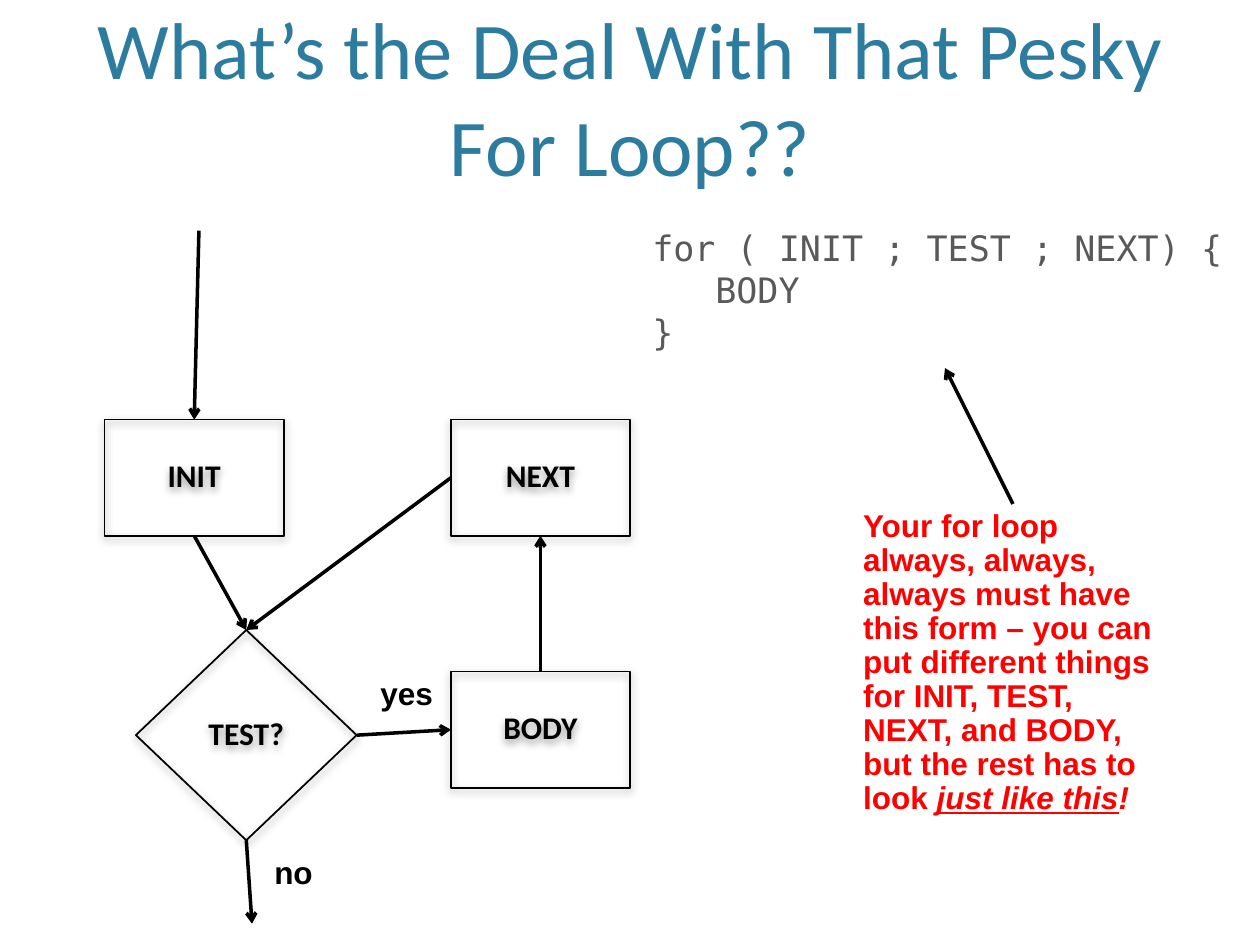
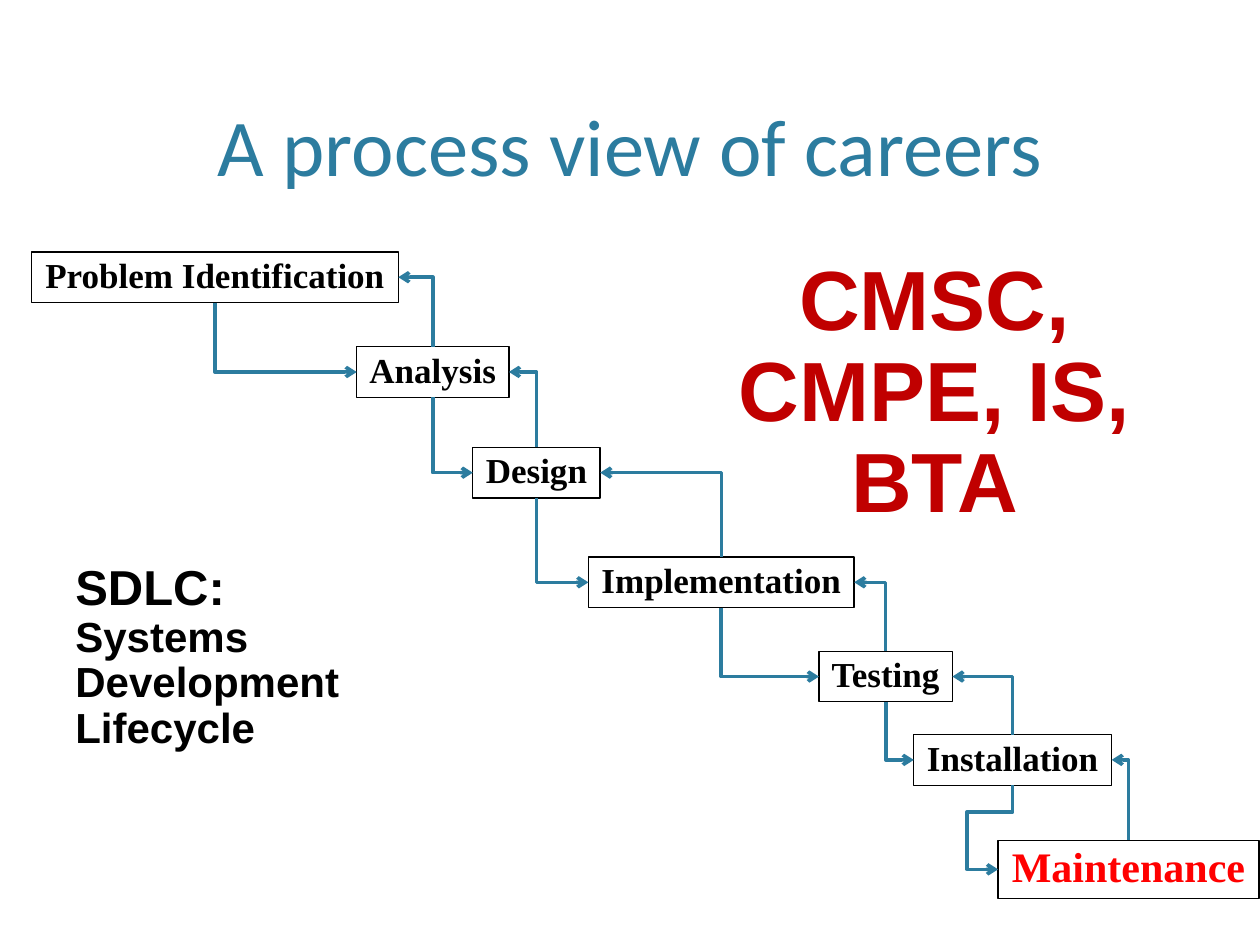
from itertools import pairwise

from pptx import Presentation
from pptx.dml.color import RGBColor
from pptx.enum.shapes import MSO_CONNECTOR as Link, MSO_SHAPE as Preset
from pptx.enum.text import MSO_ANCHOR as Anchor, MSO_AUTO_SIZE as Fit, PP_ALIGN as Align
from pptx.oxml import parse_xml
from pptx.oxml.ns import nsdecls, qn
from pptx.util import Cm, Pt

COLORS = {
    "accent": "2C7C9F",
    "code": "595959",
    "ink": "000000",
    "alert": "FF0000",
    "careers": "C00000",
}
TITLE_ONLY = 5
TOP, LEFT, BOTTOM, RIGHT = range(4)  # connection sites of rectangles and diamonds


def color(name):
    return RGBColor.from_string(COLORS[name])


def cm_all(*lengths):
    return [Cm(length) for length in lengths]


def add_span(para, text, font="Arial", size=18, ink="ink", bold=True,
             italic=False, underline=False):
    span = para.add_run()
    span.text = text
    span.font.name = font
    span.font.size = Pt(size)
    span.font.bold = bold
    span.font.italic = italic
    span.font.underline = underline
    span.font.color.rgb = color(ink)


def add_title(page, text):
    title = page.shapes.title
    title.left, title.top, title.width, title.height = cm_all(1.52, 0.3, 22.35, 3.71)
    frame = title.text_frame
    frame.auto_size = Fit.NONE
    frame.word_wrap = True
    frame.vertical_anchor = Anchor.BOTTOM
    para = frame.paragraphs[0]
    para.alignment = Align.CENTER
    add_span(para, text, font="Calibri", size=46, ink="accent", bold=False)


def add_text(page, at, *lines, align=Align.LEFT, spacing=0.9, wrap=True):
    """Add a text box; each line is a list of (text, format) spans."""
    box = page.shapes.add_textbox(*cm_all(*at))
    frame = box.text_frame
    frame.word_wrap = wrap
    frame.auto_size = Fit.SHAPE_TO_FIT_TEXT
    for index, spans in enumerate(lines):
        para = frame.add_paragraph() if index else frame.paragraphs[0]
        para.alignment = align
        para.line_spacing = spacing
        for text, style in spans:
            add_span(para, text, **style)


def add_outline(page, preset, at, text, line_width, **style):
    """Add an unfilled, black-edged shape with centred text."""
    shape = page.shapes.add_shape(preset, *cm_all(*at))
    shape.shadow.inherit = False
    shape.fill.background()
    shape.line.color.rgb = color("ink")
    shape.line.width = Pt(line_width)
    para = shape.text_frame.paragraphs[0]
    para.alignment = Align.CENTER
    para.line_spacing = 0.9
    add_span(para, text, **style)
    return shape


def add_flow_node(page, preset, at, text):
    node = add_outline(page, preset, at, text, 1, font="Calibri")
    node.text_frame.vertical_anchor = Anchor.MIDDLE
    effects = node.element.spPr.find(qn("a:effectLst"))
    effects.append(parse_xml(
        f'<a:outerShdw {nsdecls("a")} blurRad="{Pt(5)}" dist="{Pt(2)}" dir="5400000"'
        ' rotWithShape="0"><a:srgbClr val="000000"><a:alpha val="40000"/></a:srgbClr>'
        '</a:outerShdw>'))
    return node


def add_step(page, left, top, width, text, height=1.02, size=20, ink="ink"):
    step = add_outline(page, Preset.RECTANGLE, (left, top, width, height), text, 0.75,
                       font="Times New Roman", size=size, ink=ink)
    step.text_frame.word_wrap = False
    step.text_frame.auto_size = Fit.SHAPE_TO_FIT_TEXT
    step.text_frame.vertical_anchor = Anchor.TOP
    return step


def add_arrow(page, start, end, kind=Link.STRAIGHT, ink="ink"):
    """Join two ends, each a (shape, site) pair or an (x, y) point in cm."""
    arrow = page.shapes.add_connector(kind, 0, 0, 0, 0)
    if isinstance(start[1], int) and not isinstance(start[0], float):
        arrow.begin_connect(*start)
    else:
        arrow.begin_x, arrow.begin_y = cm_all(*start)
    if isinstance(end[1], int) and not isinstance(end[0], float):
        arrow.end_connect(*end)
    else:
        arrow.end_x, arrow.end_y = cm_all(*end)
    arrow.line.color.rgb = color(ink)
    arrow.line.width = Pt(2)
    properties = arrow.element.spPr
    properties.find(qn("a:ln")).append(
        parse_xml(f'<a:tailEnd {nsdecls("a")} type="arrow"/>'))
    properties.append(parse_xml(f'<a:effectLst {nsdecls("a")}/>'))
    return arrow


def add_elbow(page, start, end, rotation, flip_h=False, flip_v=False, detour=None):
    """Add an arrow that leaves vertically and arrives horizontally.

    A detour (down, left) in cm makes the arrow pass round the target's left side.
    """
    arrow = add_arrow(page, start, end, Link.ELBOW, "accent")
    across = abs(arrow.end_x - arrow.begin_x)
    down = abs(arrow.end_y - arrow.begin_y)
    center_x = (arrow.begin_x + arrow.end_x) // 2
    center_y = (arrow.begin_y + arrow.end_y) // 2
    arrow.left, arrow.top = center_x - down // 2, center_y - across // 2
    arrow.width, arrow.height = down, across
    frame = arrow.element.spPr.xfrm
    frame.rot, frame.flipH, frame.flipV = rotation, flip_h, flip_v

    geometry = arrow.element.spPr.find(qn("a:prstGeom"))
    geometry.set("prst", "bentConnector4" if detour else "bentConnector2")
    if detour:
        shares = Cm(detour[0]) / down, Cm(detour[1]) / across
        guides = "".join(f'<a:gd name="adj{number}" fmla="val {round(share * 100000)}"/>'
                         for number, share in enumerate(shares, 1))
        geometry.replace(geometry.find(qn("a:avLst")),
                         parse_xml(f'<a:avLst {nsdecls("a")}>{guides}</a:avLst>'))


def link_steps(page, upper, lower):
    """Draw the way forward to the lower step and the way back to the upper one."""
    start, end = (upper, BOTTOM), (lower, LEFT)
    if upper.left + upper.width // 2 < lower.left:
        add_elbow(page, start, end, 270, flip_h=True)
    else:
        add_elbow(page, start, end, 90, detour=(0.54, 0.92))
    add_elbow(page, (lower, TOP), (upper, RIGHT), 270, flip_v=True)


def build_for_loop(page):
    add_title(page, "What’s the Deal With That Pesky For Loop??")
    code = "for ( INIT ; TEST ; NEXT) {", "\tBODY", "}"
    code_style = dict(font="DejaVu Sans Mono", size=20, ink="code", bold=False)
    add_text(page, (12.9, 4.45, 12.5, 3.38),
             *([(line, code_style)] for line in code), spacing=1.0)
    note = dict(ink="alert")
    add_text(page, (17.15, 10.16, 6.55, 6.5), [
        ("Your for loop always, always, always must have this form – you can put "
         "different things for INIT, TEST, NEXT, and BODY, but the rest has to look ", note),
        ("just like this", dict(note, italic=True, underline=True)),
        ("!", dict(note, italic=True)),
    ])

    init, following, body = (
        add_flow_node(page, Preset.RECTANGLE, (left, top, 3.61, 2.34), text)
        for left, top, text in [(2.11, 8.46, "INIT"), (9.09, 8.46, "NEXT"),
                                (9.09, 13.54, "BODY")])
    test = add_flow_node(page, Preset.DIAMOND, (2.74, 12.7, 4.45, 4.24), "TEST?")
    for start, end in [
        ((init, BOTTOM), (test, TOP)),
        ((test, RIGHT), (body, LEFT)),
        ((test, BOTTOM), (5.08, 18.62)),
        ((body, TOP), (following, BOTTOM)),
        ((following, LEFT), (test, TOP)),
        ((4.01, 4.65), (init, TOP)),
        ((20.42, 10.16), (19.05, 7.42)),
    ]:
        add_arrow(page, start, end)
    add_text(page, (7.42, 13.54, 1.63, 0.97), [("yes", {})], wrap=False)
    add_text(page, (5.28, 17.15, 1.3, 0.97), [("no", {})], wrap=False)


def build_careers(page):
    add_title(page, "A process view of careers")
    steps = [add_step(page, *step) for step in [
        (0.64, 5.08, 7.39, "Problem Identification"),
        (7.19, 6.99, 3.07, "Analysis"),
        (9.53, 9.02, 2.57, "Design"),
        (11.86, 11.23, 5.36, "Implementation"),
        (16.51, 13.13, 2.69, "Testing"),
        (18.42, 14.81, 3.99, "Installation"),
        (20.12, 16.94, 5.26, "Maintenance", 1.17, 24, "alert"),
    ]]
    for upper, lower in pairwise(steps):
        link_steps(page, upper, lower)
    add_text(page, (1.27, 11.23, 7.19, 5.18),
             [("SDLC:", dict(size=28))],
             [("Systems Development Lifecycle", dict(size=24))])
    add_text(page, (13.34, 5.08, 11, 5.79),
             [("CMSC, CMPE, IS, BTA", dict(size=48, ink="careers"))], align=Align.CENTER)


def main():
    deck = Presentation()
    deck.slide_width, deck.slide_height = cm_all(25.4, 19.05)
    for build in (build_for_loop, build_careers):
        build(deck.slides.add_slide(deck.slide_layouts[TITLE_ONLY]))
    deck.save("out.pptx")


if __name__ == "__main__":
    main()
